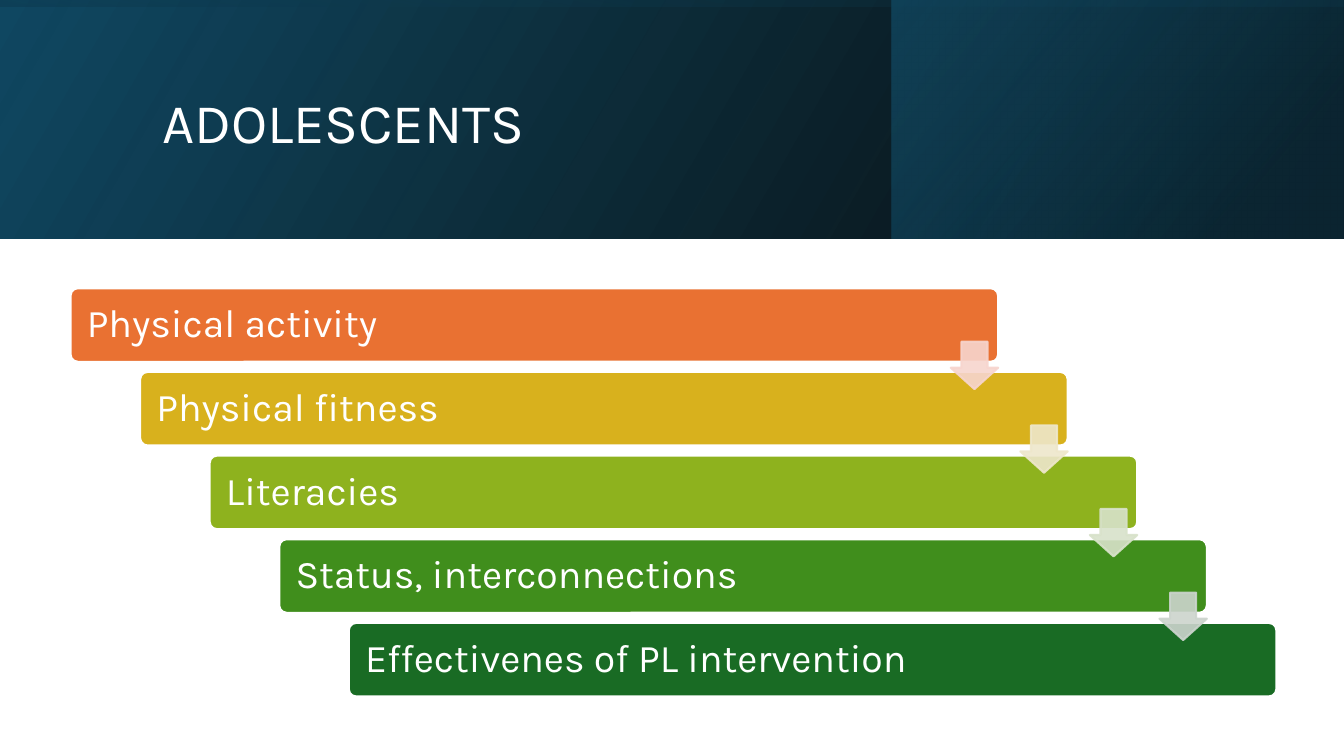
import pptx
import pptx.dml.color
import pptx.enum.shapes
import pptx.enum.text
import pptx.oxml
import pptx.oxml.ns
import pptx.util
from lxml import etree

Inches = pptx.util.Inches
RGBColor = pptx.dml.color.RGBColor
SHAPE = pptx.enum.shapes.MSO_SHAPE
qn = pptx.oxml.ns.qn

WHITE = RGBColor(0xFF, 0xFF, 0xFF)
BLACK = RGBColor(0x00, 0x00, 0x00)
NAVY = RGBColor(0x10, 0x48, 0x62)
DEEP_TEAL = RGBColor(0x0B, 0x30, 0x41)
TEAL = RGBColor(0x15, 0x60, 0x82)
ORANGE = RGBColor(0xE9, 0x71, 0x32)
GOLD = RGBColor(0xD8, 0xB1, 0x1D)
LIME = RGBColor(0x8E, 0xB2, 0x1E)
GREEN = RGBColor(0x40, 0x8E, 0x1C)
FOREST = RGBColor(0x19, 0x6B, 0x24)
PALE_ORANGE = RGBColor(0xF7, 0xD5, 0xCE)
PALE_GOLD = RGBColor(0xEE, 0xE7, 0xCB)
PALE_LIME = RGBColor(0xD8, 0xE2, 0xCA)
PALE_GREEN = RGBColor(0xCC, 0xD4, 0xCD)


def write_text(shape, text, size=28, inset=0.14):
    frame = shape.text_frame
    frame.word_wrap = True
    frame.vertical_anchor = pptx.enum.text.MSO_ANCHOR.MIDDLE
    frame.margin_left = frame.margin_right = Inches(inset)
    paragraph = frame.paragraphs[0]
    paragraph.alignment = pptx.enum.text.PP_ALIGN.LEFT
    paragraph.line_spacing = 0.9
    run = paragraph.add_run()
    run.text = text
    run.font.name = "Karla"
    run.font.size = pptx.util.Pt(size)
    run.font.color.rgb = WHITE


def set_opacity(color_element, percent):
    etree.SubElement(color_element, qn("a:alpha"), val=str(percent * 1000))


presentation = pptx.Presentation()
presentation.slide_width = Inches(13.33)
presentation.slide_height = Inches(7.5)
slide = presentation.slides.add_slide(presentation.slide_layouts[6])

# Header band: layered translucent gradients, each stop as position, colour, opacity
header_layers = [
    ((0, 0, 13.33, 2.37), 0, 330, [(0, BLACK, 96), (100, NAVY, 100 - 4)]),
    ((8.84, 0, 4.48, 2.37), 0, 320, [(19, DEEP_TEAL, 68), (100, TEAL, 48)]),
    ((5.48, -5.48, 2.37, 13.33), 270, 350, [(23, NAVY, 16), (99, BLACK, 45)]),
]
header_layers[0][3][1] = (100, NAVY, 100)
for box, rotation, angle, stops in header_layers:
    layer = slide.shapes.add_shape(SHAPE.RECTANGLE, *map(Inches, box))
    layer.shadow.inherit = False
    layer.line.fill.background()
    layer.rotation = rotation
    layer._element.spPr.find(qn("a:xfrm")).set("flipH", "1")
    layer.fill.gradient()
    gradient = layer._element.spPr.find(qn("a:gradFill"))
    gradient.find(qn("a:lin")).set("ang", str(angle * 60000))
    gradient.find(qn("a:lin")).set("scaled", "0")
    stop_list = gradient.find(qn("a:gsLst"))
    for default_stop in list(stop_list):
        stop_list.remove(default_stop)
    for position, color, opacity in stops:
        stop = etree.SubElement(stop_list, qn("a:gs"), pos=str(position * 1000))
        set_opacity(etree.SubElement(stop, qn("a:srgbClr"), val=str(color)), opacity)

# Title
title = slide.shapes.add_textbox(Inches(1.51), Inches(0.38), Inches(10.63), Inches(1.72))
write_text(title, "ADOLESCENTS", size=40, inset=0.1)

# Staircase of topics
STEP_X, STEP_Y = 0.69, 0.83
topics = [
    ("Physical activity", ORANGE),
    ("Physical fitness", GOLD),
    ("Literacies", LIME),
    ("Status, interconnections", GREEN),
    ("Effectivenes of PL intervention", FOREST),
]
for index, (topic, color) in enumerate(topics):
    bar = slide.shapes.add_shape(
        SHAPE.ROUNDED_RECTANGLE,
        Inches(0.7 + index * STEP_X), Inches(2.86 + index * STEP_Y),
        Inches(9.2), Inches(0.73))
    bar.adjustments[0] = 0.1
    bar.shadow.inherit = False
    bar.fill.solid()
    bar.fill.fore_color.rgb = color
    bar.line.color.rgb = WHITE
    bar.line.width = pptx.util.Pt(1.5)
    write_text(bar, topic)

# Arrows leading from each step to the next
for index, color in enumerate([PALE_ORANGE, PALE_GOLD, PALE_LIME, PALE_GREEN]):
    arrow = slide.shapes.add_shape(
        SHAPE.DOWN_ARROW,
        Inches(9.43 + index * STEP_X), Inches(3.39 + index * STEP_Y),
        Inches(0.47), Inches(0.47))
    # Adjustments run head length first in drawing order: shaft width, then head
    arrow.adjustments[0] = 0.55
    arrow.adjustments[1] = 0.45
    arrow.shadow.inherit = False
    arrow.fill.solid()
    arrow.fill.fore_color.rgb = color
    arrow.line.color.rgb = color
    arrow.line.width = pptx.util.Pt(1.5)
    for color_element in arrow._element.spPr.iter(qn("a:srgbClr")):
        set_opacity(color_element, 90)

presentation.save("out.pptx")
